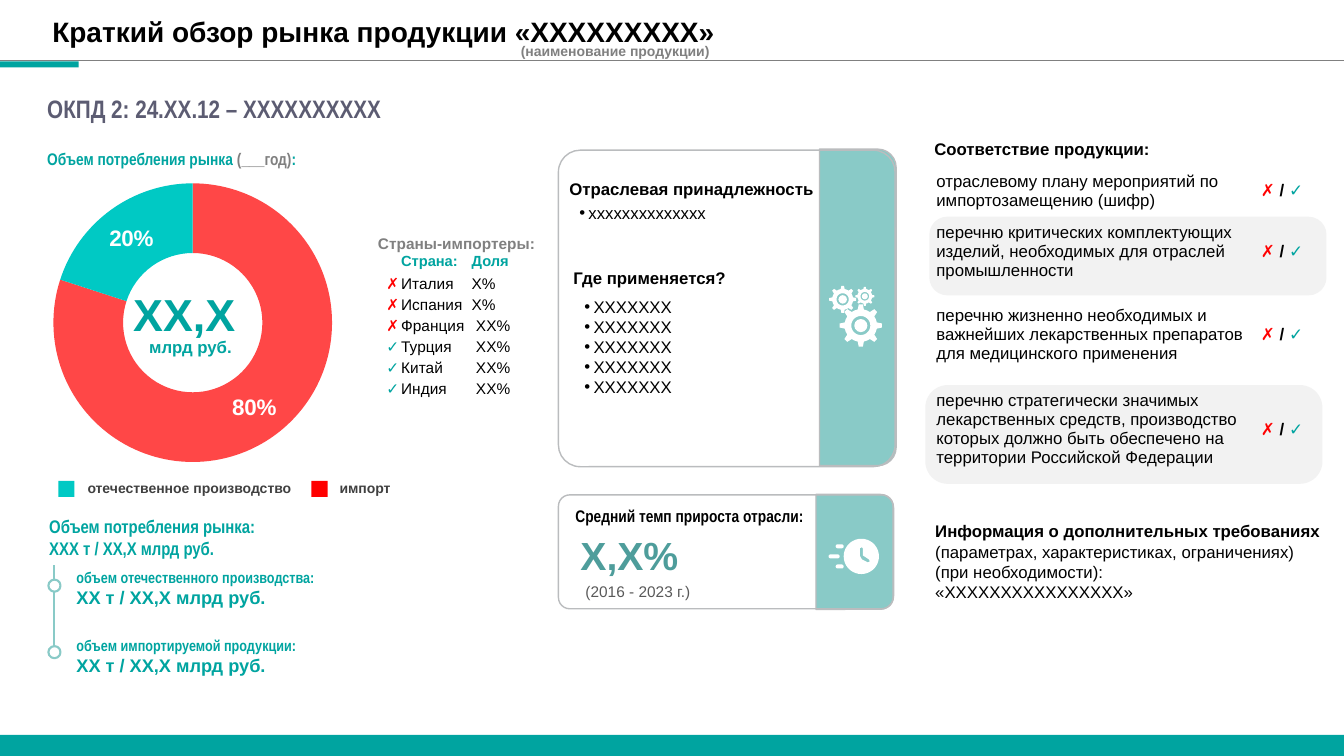
import math
from dataclasses import dataclass
from typing import NamedTuple, Optional

import pptx
from pptx import util as u
from pptx.chart import data as cd
from pptx.dml import color as dc
from pptx.enum import chart as ch
from pptx.enum import shapes, text
from pptx.oxml import ns, xmlchemy

PX = 9144
TEAL = dc.RGBColor(0x00, 0xA4, 0xA0)
AQUA = dc.RGBColor(0x00, 0xC9, 0xC4)
MINT = dc.RGBColor(0x89, 0xCA, 0xC7)
DEEP = dc.RGBColor(0x4E, 0x9D, 0x9B)
RED = dc.RGBColor(0xFF, 0x00, 0x00)
CORAL = dc.RGBColor(0xFF, 0x47, 0x47)
BLACK = dc.RGBColor(0x00, 0x00, 0x00)
WHITE = dc.RGBColor(0xFF, 0xFF, 0xFF)
SLATE = dc.RGBColor(0x5C, 0x5C, 0x72)
DARK = dc.RGBColor(0x40, 0x40, 0x40)
DIM = dc.RGBColor(0x59, 0x59, 0x59)
GRAY = dc.RGBColor(0x80, 0x80, 0x80)
EDGE = dc.RGBColor(0xBA, 0xBC, 0xBE)
PALE = dc.RGBColor(0xF2, 0xF2, 0xF2)
NARROW = "Arial Narrow"
KIND = shapes.MSO_SHAPE
CENTER, RIGHT = text.PP_ALIGN.CENTER, text.PP_ALIGN.RIGHT
MIDDLE, BOTTOM = text.MSO_ANCHOR.MIDDLE, text.MSO_ANCHOR.BOTTOM


class Run(NamedTuple):
    words: str
    size: float
    rgb: dc.RGBColor = BLACK
    bold: bool = False
    face: str = "Arial"


class Cell(NamedTuple):
    runs: list
    align: Optional[int] = None
    anchor: int = MIDDLE


@dataclass
class Form:
    kind: int
    box: tuple
    fill: Optional[dc.RGBColor] = None
    edge: Optional[dc.RGBColor] = None
    weight: float = 1
    adj: tuple = ()
    turn: int = 0


@dataclass
class Label:
    box: tuple
    paras: list
    align: Optional[int] = None
    spacing: Optional[float] = None
    bullet: bool = False
    wrap: bool = True
    grow: bool = True


def emu(*lengths: float) -> list:
    return [u.Emu(round(v * PX)) for v in lengths]


def write(p, runs: list, align=None) -> None:
    p.alignment = align
    for item in runs:
        for i, part in enumerate(item.words.split("\n")):
            if i:
                p.add_line_break()
            if not part:
                continue
            r = p.add_run()
            r.text = part
            fmt = {"size": u.Pt(item.size), "bold": item.bold, "name": item.face}
            for name, value in fmt.items():
                setattr(r.font, name, value)
            r.font.color.rgb = item.rgb


def draw_form(s, form: Form):
    sp = s.shapes.add_shape(form.kind, *emu(*form.box))
    sp.shadow.inherit = False
    sp.rotation = form.turn
    for i, value in enumerate(form.adj):
        sp.adjustments[i] = value
    paint(sp, form.fill, form.edge, form.weight)
    return sp


def paint(sp, fill, edge=None, weight: float = 1) -> None:
    for target, rgb in ((sp.fill, fill), (sp.line.fill, edge)):
        if rgb is None:
            target.background()
        else:
            target.solid()
            target.fore_color.rgb = rgb
    if edge is not None:
        sp.line.width = u.Pt(weight)


def draw_label(s, label: Label) -> None:
    tf = s.shapes.add_textbox(*emu(*label.box)).text_frame
    sizing = text.MSO_AUTO_SIZE
    fmt = {"word_wrap": label.wrap,
           "auto_size": sizing.SHAPE_TO_FIT_TEXT if label.grow else sizing.NONE}
    for name, value in fmt.items():
        setattr(tf, name, value)
    for i, runs in enumerate(label.paras):
        p = tf.add_paragraph() if i else tf.paragraphs[0]
        write(p, runs, label.align)
        p.line_spacing = label.spacing
        if label.bullet:
            pr = p._p.get_or_add_pPr()
            pr.set("marL", str(19 * PX))
            pr.set("indent", str(-9 * PX))
            child(pr, "a:buFont", typeface="Arial")
            child(pr, "a:buChar", char="•")


def child(parent, tag: str, **attrs: str):
    el = xmlchemy.OxmlElement(tag)
    for name, value in attrs.items():
        el.set(name, value)
    parent.append(el)
    return el


def draw_table(s, left: int, top: int, widths: list, heights: list, rows: list) -> None:
    box = emu(left, top, sum(widths), sum(heights))
    tbl = s.shapes.add_table(len(rows), len(widths), *box).table
    tbl.first_row = tbl.horz_banding = False
    style = tbl._tbl.tblPr.find(ns.qn("a:tableStyleId"))
    style.text = "{2D5ABB26-0587-4C30-8999-92F81FD0307C}"
    for col, width in zip(tbl.columns, emu(*widths)):
        col.width = width
    for row, height, items in zip(tbl.rows, emu(*heights), rows):
        row.height = height
        for cell, item in zip(row.cells, items):
            fmt = {"margin_left": PX, "margin_right": PX, "margin_top": PX,
                   "margin_bottom": 0, "vertical_anchor": item.anchor}
            for name, value in fmt.items():
                setattr(cell, name, value)
            cell.fill.background()
            p = cell.text_frame.paragraphs[0]
            write(p, item.runs, item.align)
            if not item.runs:
                child(p._p, "a:endParaRPr", sz="1050")


def draw_line(s, ends: tuple, rgb: dc.RGBColor, weight: float):
    line = s.shapes.add_connector(shapes.MSO_CONNECTOR.STRAIGHT, *emu(*ends))
    line.line.color.rgb = rgb
    line.line.width = u.Pt(weight)
    child(line._element.spPr, "a:effectLst")
    return line


def ring(cx: float, cy: float, radius: float) -> list:
    return [polar(cx, cy, radius, a) for a in range(0, 360, 10)]


def polar(cx: float, cy: float, radius: float, degrees: float) -> tuple:
    a = math.radians(degrees)
    return cx + radius * math.cos(a), cy + radius * math.sin(a)


def draw_outline(s, contours: list) -> None:
    first, *rest = [[tuple(emu(*pt)) for pt in c] for c in contours]
    fb = s.shapes.build_freeform(*first[0], scale=1.0)
    fb.add_line_segments(first[1:])
    for points in rest:
        fb.move_to(*points[0])
        fb.add_line_segments(points[1:])
    sp = fb.convert_to_shape()
    sp.shadow.inherit = False
    paint(sp, WHITE)


def draw_gear(s, cx: int, cy: int, radius: float) -> None:
    teeth = [polar(cx, cy, radius * k, tooth + a) for tooth in range(0, 360, 45)
             for a, k in ((-11, 0.77), (-5.5, 1), (5.5, 1), (11, 0.77), (22.5, 0.77))]
    draw_outline(s, [teeth, ring(cx, cy, radius * 0.45)])
    hub = radius * 0.31
    draw_form(s, Form(KIND.OVAL, (cx - hub, cy - hub, 2 * hub, 2 * hub), WHITE))


def draw_chart(s) -> None:
    data = cd.CategoryChartData()
    data.categories = ["1", "2"]
    data.add_series("Series 1", (80, 20))
    chart = s.shapes.add_chart(ch.XL_CHART_TYPE.DOUGHNUT, *emu(-130, 142, 663, 344), data).chart
    chart.has_legend = chart.has_title = False
    plot = chart.plots[0]
    plot.vary_by_categories = False
    series = plot.series[0]
    for i, rgb in enumerate((CORAL, AQUA)):
        fmt = series.points[i].format
        fmt.fill.solid()
        fmt.fill.fore_color.rgb = rgb
        fmt.line.fill.background()
    labels = series.data_labels
    for name, value in {"show_percentage": True, "show_value": False,
                        "number_format": "0%", "number_format_is_linked": False}.items():
        setattr(labels, name, value)
    for font in (chart.font, labels.font):
        for name, value in {"size": u.Pt(16), "bold": True, "name": "Arial"}.items():
            setattr(font, name, value)
        font.color.rgb = WHITE
    plot._element.find(ns.qn("c:holeSize")).set("val", "65")
    area = plot._element.getparent()
    for old in area.findall(ns.qn("c:layout")):
        area.remove(old)
    layout = xmlchemy.OxmlElement("c:layout")
    area.insert(0, layout)
    manual = child(layout, "c:manualLayout")
    for tag, value in (("layoutTarget", "inner"), ("xMode", "edge"), ("yMode", "edge"),
                       ("x", "0.276"), ("y", "0.116"), ("w", "0.417"), ("h", "0.804")):
        child(manual, "c:" + tag, val=value)


IMPORTERS = [("✗", "Италия", "Х%"), ("✗", "Испания", "Х%"), ("✗", "Франция", " ХХ%"),
             ("✓", "Турция", " ХХ%"), ("✓", "Китай", " ХХ%"), ("✓", "Индия", " ХХ%")]
CRITERIA = ["отраслевому плану мероприятий по импортозамещению (шифр)",
            "перечню критических комплектующих изделий, необходимых для отраслей промышленности",
            "перечню жизненно необходимых и важнейших лекарственных препаратов для медицинского применения",
            "перечню стратегически значимых лекарственных средств, производство которых должно быть "
            "обеспечено на территории Российской Федерации"]
VERDICT = [Run("✗", 12, RED, True), Run(" / ", 12, BLACK, True), Run("✓", 12, TEAL, True)]
FORMS = [
    Form(KIND.ROUND_2_SAME_RECTANGLE, (694, 267, 314, 76), MINT, EDGE, adj=(0.238, 0), turn=90),
    Form(KIND.ROUNDED_RECTANGLE, (554, 149, 334, 314), edge=EDGE, adj=(0.069,)),
    Form(KIND.ROUND_2_SAME_RECTANGLE, (791, 509, 114, 77), MINT, EDGE, adj=(0.172, 0), turn=90),
    Form(KIND.ROUNDED_RECTANGLE, (554, 491, 332, 113), edge=EDGE, adj=(0.099,)),
    Form(KIND.RECTANGLE, (58, 477, 16, 16), AQUA),
    Form(KIND.RECTANGLE, (309, 477, 16, 16), RED),
    Form(KIND.RECTANGLE, (0, 61, 78, 6), TEAL),
    Form(KIND.RECTANGLE, (0, 729, 1334, 21), TEAL),
    *[Form(KIND.ROUNDED_RECTANGLE, box, WHITE, adj=(0.5,))
      for box in ((829, 540, 8, 4), (829, 560, 8, 4), (822, 550, 11, 4))],
]
LABELS = [
    Label((37, 88, 443, 40), [[Run("ОКПД 2: 24.ХХ.12 – ХХХХХХХХХХ", 18, SLATE, True, NARROW)]]),
    Label((42, 13, 1219, 54), [[Run("Краткий обзор рынка продукции «ХХХХХХХХХ»", 20, BLACK, True)]],
          spacing=0.9, grow=False),
    Label((555, 167, 290, 35), [[Run("Отраслевая принадлежность", 12, BLACK, True)]], spacing=u.Pt(18)),
    Label((555, 196, 246, 30), [[Run("хххххххххххххх", 12)]], bullet=True),
    Label((77, 471, 274, 27), [[Run("отечественное производство", 10, DARK, True)]]),
    Label((327, 471, 72, 27), [[Run("импорт", 10, DARK, True)]], wrap=False),
    Label((73, 290, 232, 69), [[Run("ХХ,Х \n", 32, TEAL, True), Run("млрд руб.", 12, TEAL, True)]],
          align=CENTER, spacing=0.8),
    Label((37, 143, 346, 30), [[Run("Объем потребления рынка ", 12, TEAL, True, NARROW),
                                Run("(___год)", 12, GRAY, True, NARROW), Run(":", 12, TEAL, True, NARROW)]]),
    Label((561, 497, 253, 30), [[Run("Средний темп прироста отрасли:", 12, BLACK, True, NARROW)]]),
    Label((566, 522, 195, 57), [[Run("Х,Х%", 28, DEEP, True)]]),
    Label((571, 573, 127, 29), [[Run("(2016 - 2023 г.)", 11, DIM)]]),
    Label((559, 265, 230, 26), [[Run("Где применяется?", 12, BLACK, True)]], spacing=0.8),
    Label((560, 289, 246, 111), [[Run("ХХХХХХХ", 12)]] * 5, bullet=True),
    Label((39, 506, 233, 54), [[Run("Объем потребления рынка: ХХХ т / ХХ,Х млрд руб.", 13, TEAL, True, NARROW)]]),
    Label((917, 133, 395, 30), [[Run("Соответствие продукции:", 12, BLACK, True)]]),
    Label((918, 512, 408, 91), [
        [Run("Информация о дополнительных требованиях ", 12, BLACK, True),
         Run("(параметрах, характеристиках, ограничениях) (при необходимости):", 12)],
        [Run("«ХХХХХХХХХХХХХХХХ»", 12)]]),
    Label((341, 221, 224, 33), [[Run("Страны-импортеры:", 11, GRAY, True)]], align=CENTER, spacing=u.Pt(18)),
    Label((503, 37, 217, 27), [[Run(" ", 10, BLACK, True), Run("(наименование продукции)", 10, GRAY, True)]],
          wrap=False),
]
for y, source in ((559, "объем отечественного производства:"), (626, "объем импортируемой продукции:")):
    LABELS += [Label((66, y, 273, 29), [[Run(source, 11, TEAL, True, NARROW)]]),
               Label((66, y + 18, 225, 32), [[Run("ХХ т / ХХ,Х млрд руб.", 13, TEAL, True)]])]


def main() -> None:
    prs = pptx.Presentation()
    prs.slide_width, prs.slide_height = emu(1333.33, 750)
    s = prs.slides.add_slide(prs.slide_layouts[6])
    for box in ((918, 382, 394, 98), (922, 215, 394, 78)):
        draw_form(s, Form(KIND.ROUNDED_RECTANGLE, box, PALE, adj=(0.228,)))
    draw_chart(s)
    head = [Cell([])] + [Cell([Run(t, 10.5, TEAL, True)]) for t in ("Страна:", "Доля")]
    body = [[Cell([Run(mark, 11, RED if mark == "✗" else TEAL, True)], RIGHT, BOTTOM),
             Cell([Run(land, 11)], anchor=BOTTOM), Cell([Run(share, 11)], anchor=BOTTOM)]
            for mark, land, share in IMPORTERS]
    draw_table(s, 292, 248, [105, 70, 140], [21] * 7, [head] + body)
    draw_table(s, 928, 166, [307, 74], [46, 74, 91, 97],
               [[Cell([Run(t, 12)]), Cell(VERDICT, CENTER)] for t in CRITERIA])
    draw_line(s, (0, 60, 1334, 60), GRAY, 0.5)
    for form in FORMS:
        draw_form(s, form)
    for gear in ((854, 323, 21), (836, 297, 13.5), (858, 294, 9.5)):
        draw_gear(s, *gear)
    draw_outline(s, [ring(854.5, 552, 17.5),
                     [(853, 544), (855, 543), (856, 544), (856, 551), (862, 555),
                      (863, 557), (861, 558), (855, 555), (853, 551)]])
    stem = draw_line(s, (54, 561, 54, 641), MINT, 1.5)
    dots = [draw_form(s, Form(KIND.OVAL, (48, y, 12, 12), WHITE, MINT, 1.5)) for y in (575, 641)]
    stem.end_connect(dots[1], 0)
    for label in LABELS:
        draw_label(s, label)
    prs.save("out.pptx")


if __name__ == "__main__":
    main()
